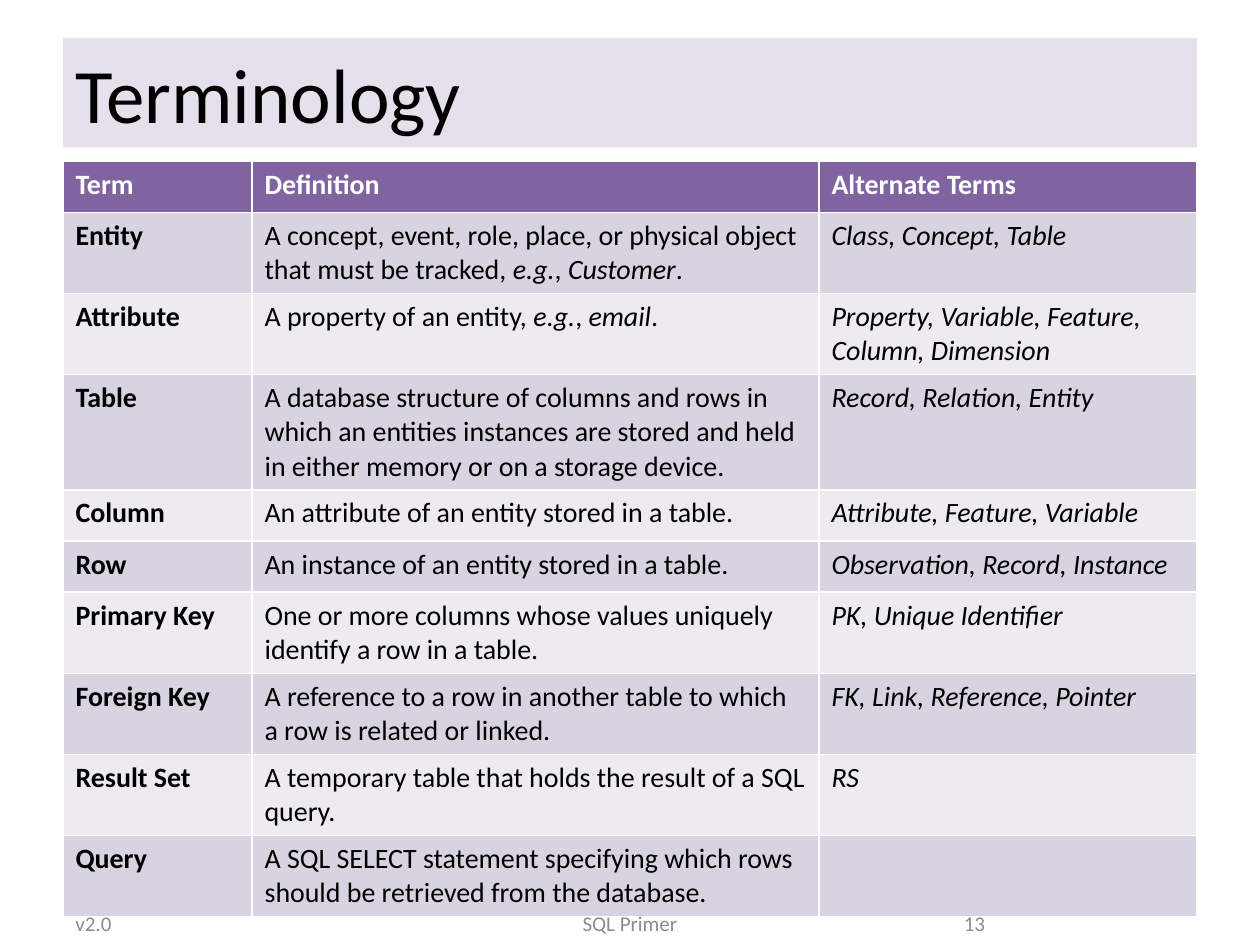
import pptx
import pptx.util
import pptx.dml.color
import pptx.enum.text

Pt = pptx.util.Pt
RGB = pptx.dml.color.RGBColor
ALIGN = pptx.enum.text.PP_ALIGN
MIDDLE = pptx.enum.text.MSO_ANCHOR.MIDDLE

BLACK = RGB(0x00, 0x00, 0x00)
WHITE = RGB(0xFF, 0xFF, 0xFF)
GRAY = RGB(0x8C, 0x8C, 0x8C)
LILAC = RGB(0xE6, 0xE0, 0xEC)
PURPLE = RGB(0x80, 0x64, 0xA2)
DARK = RGB(0xD8, 0xD3, 0xE0)
LIGHT = RGB(0xED, 0xEA, 0xF0)


def write(frame, text, size=16, color=BLACK, bold=False, align=ALIGN.LEFT):
    frame.word_wrap = True
    para = frame.paragraphs[0]
    para.alignment = align
    for i, part in enumerate(text.split("*")):
        if part:
            run = para.add_run()
            run.text = part
            run.font.name = "Calibri"
            run.font.size = Pt(size)
            run.font.color.rgb = color
            run.font.bold = bold
            run.font.italic = i % 2 == 1


deck = pptx.Presentation()
deck.slide_width, deck.slide_height = Pt(720), Pt(540)
slide = deck.slides.add_slide(deck.slide_layouts[5])

title = slide.shapes.title
title.left, title.top, title.width, title.height = Pt(36), Pt(21.6), Pt(648), Pt(62.6)
title.fill.solid()
title.fill.fore_color.rgb = LILAC
title.text_frame.vertical_anchor = MIDDLE
write(title.text_frame, "Terminology", size=44)

rows = [
    ("Term", "Definition", "Alternate Terms"),
    ("Entity", "A concept, event, role, place, or physical object that must be tracked, *e.g.*, *Customer*.",
     "*Class, Concept, Table*"),
    ("Attribute", "A property of an entity, *e.g.*, *email*.",
     "*Property, Variable, Feature, Column, Dimension*"),
    ("Table", "A database structure of columns and rows in which an entities instances are stored "
     "and held in either memory or on a storage device.", "*Record, Relation, Entity*"),
    ("Column", "An attribute of an entity stored in a table.", "*Attribute, Feature, Variable*"),
    ("Row", "An instance of an entity stored in a table.", "*Observation, Record, Instance*"),
    ("Primary Key", "One or more columns whose values uniquely identify a row in a table.",
     "*PK, Unique Identifier*"),
    ("Foreign Key", "A reference to a row in another table to which a row is related or linked.",
     "*FK, Link, Reference, Pointer*"),
    ("Result Set", "A temporary table that holds the result of a SQL query.", "*RS*"),
    ("Query", "A SQL SELECT statement specifying which rows should be retrieved from the database.", ""),
]
grid = slide.shapes.add_table(len(rows), 3, Pt(36), Pt(92.2), Pt(648), Pt(292)).table
for col, width in zip(grid.columns, (108, 324, 216)):
    col.width = Pt(width)
for r, row in enumerate(rows):
    fill = PURPLE if r == 0 else DARK if r % 2 else LIGHT
    for c, text in enumerate(row):
        cell = grid.cell(r, c)
        cell.fill.solid()
        cell.fill.fore_color.rgb = fill
        write(cell.text_frame, text, color=BLACK if r else WHITE, bold=r == 0 or c == 0)

for text, left, width, align in (
    ("v2.0", 36, 168, ALIGN.LEFT),
    ("SQL Primer", 246, 228, ALIGN.CENTER),
    ("13", 516, 54, ALIGN.RIGHT),
):
    foot = slide.shapes.add_textbox(Pt(left), Pt(516.2), Pt(width), Pt(22.3))
    foot.text_frame.vertical_anchor = MIDDLE
    write(foot.text_frame, text, size=12, color=GRAY, align=align)

deck.save("out.pptx")
